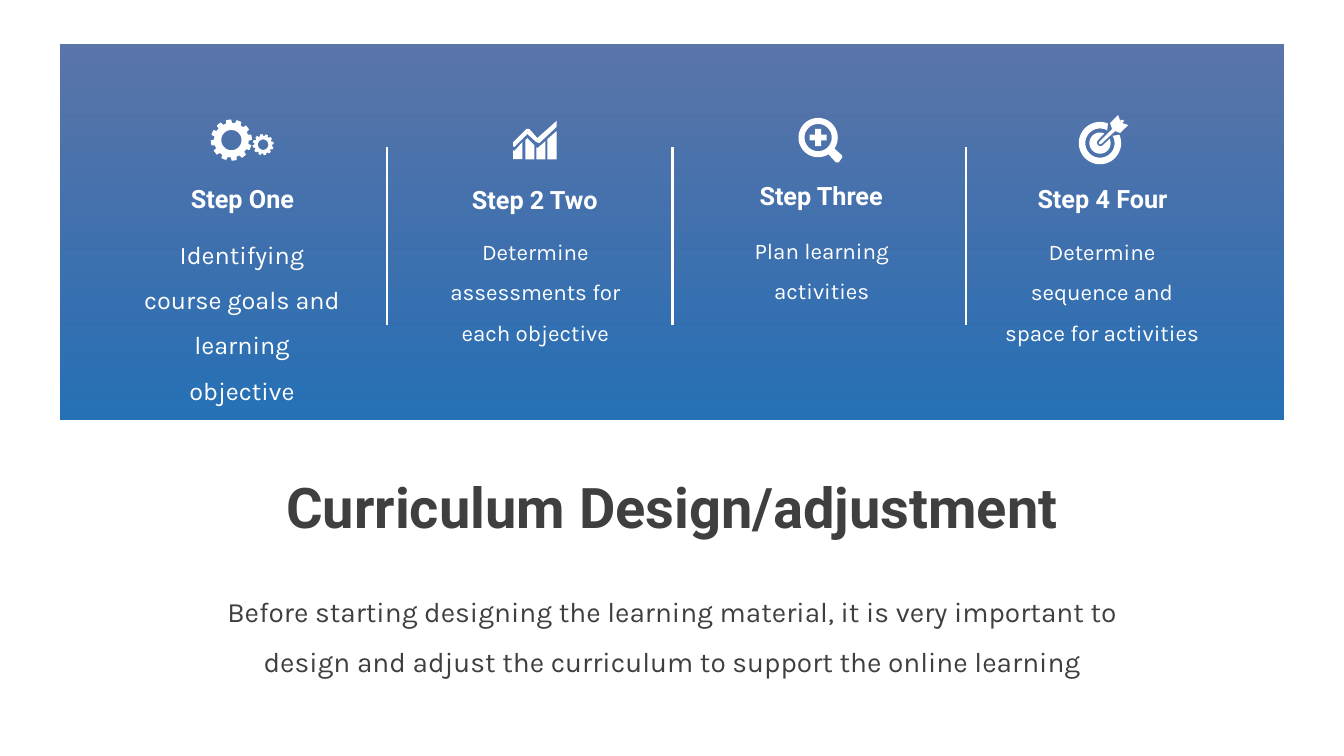
from dataclasses import dataclass
from math import cos, radians, sin

from lxml import etree
from pptx import Presentation
from pptx.dml.color import RGBColor
from pptx.enum.shapes import MSO_CONNECTOR, MSO_SHAPE
from pptx.enum.text import MSO_ANCHOR, MSO_AUTO_SIZE, PP_ALIGN
from pptx.oxml.ns import qn
from pptx.util import Inches, Pt

STRAIGHT = MSO_CONNECTOR.STRAIGHT
RECT, CROSS = MSO_SHAPE.RECTANGLE, MSO_SHAPE.CROSS
TOP, MIDDLE = MSO_ANCHOR.TOP, MSO_ANCHOR.MIDDLE
CENTER = PP_ALIGN.CENTER
GROW = MSO_AUTO_SIZE.SHAPE_TO_FIT_TEXT
WHITE, GRAY = "FFFFFF", "3F3F3F"
HEAD, BODY = "Roboto", "Karla"

Point = tuple[float, float]


@dataclass
class Step:
    title: str
    body: str
    left: float
    title_top: float
    body_left: float
    body_top: float
    body_height: float
    body_size: int = 16


STEPS = [
    Step("Step One", "Identifying course goals and learning objective",
         1.17, 1.77, 1.28, 2.17, 1.41, 18),
    Step("Step 2 Two", "Determine assessments for each objective",
         4.07, 1.78, 4.19, 2.18, 1.26),
    Step("Step Three", "Plan learning activities",
         6.91, 1.74, 7.03, 2.17, 0.86),
    Step("Step 4 Four", "Determine sequence and space for activities",
         9.7, 1.77, 9.81, 2.18, 1.26),
]
DIVIDERS = [3.84, 6.67, 9.58]


def rgb(color: str) -> RGBColor:
    return RGBColor.from_string(color)


def add_text(s, text: str, box: tuple, *, font: str, size: int, color: str = WHITE,
             bold: bool = False, spacing: float = 1.0, anchor=TOP, grow: bool = True) -> None:
    tf = s.shapes.add_textbox(*map(Inches, box)).text_frame
    tf.word_wrap = True
    tf.vertical_anchor = anchor
    if grow:
        tf.auto_size = GROW
    p = tf.paragraphs[0]
    p.alignment, p.line_spacing = CENTER, spacing
    r = p.add_run()
    r.text = text
    r.font.name, r.font.size, r.font.bold = font, Pt(size), bold
    r.font.color.rgb = rgb(color)


def paint(sp) -> None:
    sp.shadow.inherit = False
    sp.fill.solid()
    sp.fill.fore_color.rgb = rgb(WHITE)
    sp.line.fill.background()


def add_outline(icon, *contours: list[Point]) -> None:
    """Draw one white shape; later contours cut holes in the first."""
    paths = [[(Inches(x), Inches(y)) for x, y in c] for c in contours]
    builder = icon.shapes.build_freeform(*paths[0][0])
    builder.add_line_segments(paths[0][1:], close=True)
    for path in paths[1:]:
        builder.move_to(*path[0])
        builder.add_line_segments(path[1:], close=True)
    paint(builder.convert_to_shape())


def arc(cx: float, cy: float, radius: float, start: float = 0, end: float = 360) -> list[Point]:
    n = 48
    angles = [radians(start + (end - start) * i / n) for i in range(n + 1)]
    return [(cx + radius * cos(a), cy + radius * sin(a)) for a in angles]


def add_gear(icon, cx: float, cy: float, radius: float, phase: float) -> None:
    teeth, root, hole = 12, 0.84, 0.49
    profile = [(-10, root), (-7, 1), (7, 1), (10, root)]
    rim = []
    for i in range(teeth):
        for offset, ratio in profile:
            a = radians(phase + i * 360 / teeth + offset)
            rim.append((cx + radius * ratio * cos(a), cy + radius * ratio * sin(a)))
    add_outline(icon, rim, arc(cx, cy, radius * hole, 360, 0))


def draw_gears(icon) -> None:
    add_gear(icon, 2.295, 1.39, 0.205, -8)
    add_gear(icon, 2.61, 1.435, 0.105, -10)


def draw_growth(icon) -> None:
    base, width = 1.58, 0.09
    bars = [  # left, then the top edge from left to right
        (5.09, [(0, 1.49), (0.01, 1.5), (width, 1.41)]),
        (5.21, [(0, 1.39), (0.02, 1.37), (width, 1.44)]),
        (5.32, [(0, 1.46), (0.01, 1.47), (width, 1.4)]),
        (5.43, [(0, 1.38), (width, 1.3)]),
    ]
    for left, edge in bars:
        add_outline(icon, [(left, base)] + [(left + dx, y) for dx, y in edge]
                    + [(left + width, base)])
    add_outline(icon, [(5.52, 1.2), (5.33, 1.37), (5.25, 1.28), (5.22, 1.28), (5.09, 1.41),
                       (5.09, 1.45), (5.1, 1.46), (5.23, 1.33), (5.32, 1.41), (5.35, 1.42),
                       (5.52, 1.26)])


def draw_magnifier(icon) -> None:
    cx, cy = 8.115, 1.365
    plus = icon.shapes.add_shape(CROSS, *map(Inches, (8.03, 1.28, 0.17, 0.17)))
    plus.adjustments[0] = 0.33
    paint(plus)
    handle = [(8.35, 1.54), (8.355, 1.56), (8.32, 1.61), (8.29, 1.61)]
    add_outline(icon, arc(cx, cy, 0.195, 58, 394) + handle, arc(cx, cy, 0.135, 360, 0))


def draw_target(icon) -> None:
    cx, cy = 10.91, 1.42
    add_outline(icon, arc(cx, cy, 0.21, -23, 292) + arc(cx, cy, 0.145, 300, -30))
    add_outline(icon, [(11.14, 1.19), (11.12, 1.19), (11.11, 1.2), (11.09, 1.14), (11.01, 1.22),
                       (11.03, 1.28), (10.9, 1.41), (10.9, 1.43), (10.92, 1.43), (11.06, 1.3),
                       (11.11, 1.32), (11.19, 1.24), (11.13, 1.22), (11.15, 1.2)])
    add_outline(icon, arc(cx, cy, 0.105, -24, 294) + arc(10.915, 1.415, 0.035, 225, 45))


def add_panel(s) -> None:
    sp = s.shapes.add_shape(RECT, *map(Inches, (0.6, 0.44, 12.13, 3.72)))
    sp.shadow.inherit = False
    sp.line.fill.background()
    sp.fill.gradient()
    sp.fill.gradient_angle = 270
    looks = [(0, "143B86", 70), (1, "0D60AE", 90)]
    for stop, (position, color, _) in zip(sp.fill.gradient_stops, looks):
        stop.position = position
        stop.color.rgb = rgb(color)
    for el, (_, _, opacity) in zip(sp._element.spPr.iter(qn("a:srgbClr")), looks):
        etree.SubElement(el, qn("a:alpha"), val=str(opacity * 1000))


def add_divider(s, x: float) -> None:
    line = s.shapes.add_connector(STRAIGHT, *map(Inches, (x, 1.46, x, 3.22)))
    line.line.color.rgb = rgb(WHITE)
    line.line.width = Pt(1.5)
    etree.SubElement(line._element.spPr, qn("a:effectLst"))


def main() -> None:
    prs = Presentation()
    prs.slide_width, prs.slide_height = Inches(13.33), Inches(7.5)
    s = prs.slides.add_slide(prs.slide_layouts[6])

    # Panel, title and introduction
    add_panel(s)
    add_text(s, "Curriculum Design/adjustment", (0.6, 4.55, 12.13, 1.03), font=HEAD, size=40,
             color=GRAY, bold=True, spacing=0.9, anchor=MIDDLE, grow=False)
    add_text(s, "Before starting designing the learning material, it is very important to "
             "design and adjust the curriculum to support the online learning",
             (2.13, 5.68, 9.08, 1.05), font=BODY, size=20, color=GRAY, spacing=1.5)

    # Icons
    for draw in (draw_target, draw_magnifier, draw_growth, draw_gears):
        draw(s.shapes.add_group_shape())

    # Steps
    for step in STEPS:
        add_text(s, step.body, (step.body_left, step.body_top, 2.24, step.body_height),
                 font=BODY, size=step.body_size, spacing=1.5)
        add_text(s, step.title, (step.left, step.title_top, 2.47, 0.4),
                 font=HEAD, size=18, bold=True)

    # Dividers
    for x in DIVIDERS:
        add_divider(s, x)

    prs.save("out.pptx")


if __name__ == "__main__":
    main()
